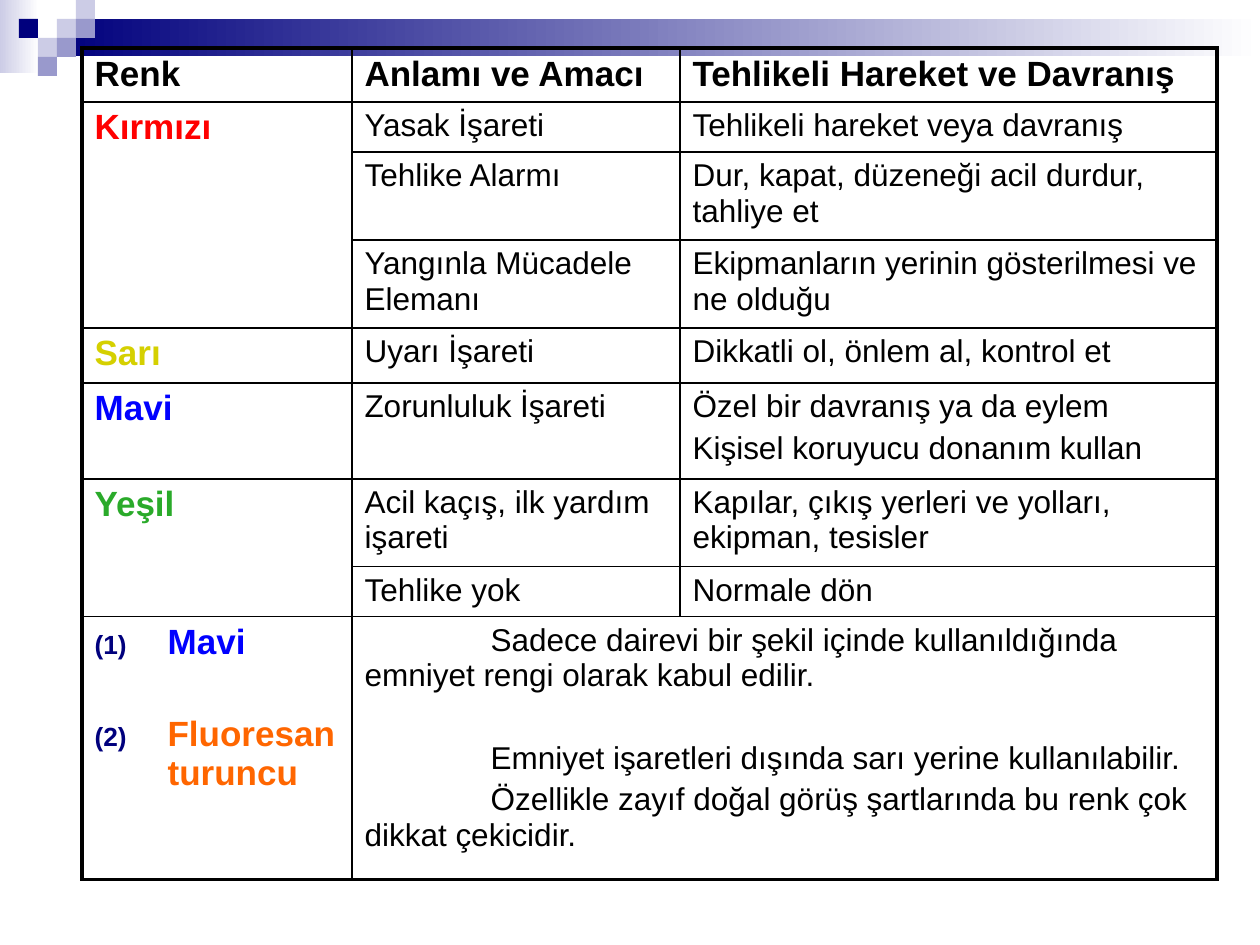
"""Build a slide with a table of safety colours and their meanings."""
from dataclasses import dataclass
from typing import Optional

from lxml.etree import SubElement
from pptx import Presentation
from pptx.dml.color import RGBColor
from pptx.enum.shapes import MSO_SHAPE as Preset
from pptx.oxml.ns import qn
from pptx.util import Emu, Pt

EMU_PER_PX = 914400 / 126
SQUARE = 19
FONT = "Arial"
BLACK, NAVY, LILAC, LAVENDER, WHITE = "000000", "00007D", "9999CC", "CCCCE6", "FFFFFF"
RED, YELLOW, BLUE, GREEN, ORANGE = "FF0000", "D5D000", "0000FF", "2AAA2A", "FF6600"
TABLE_LEFT, TABLE_TOP = 82, 48
COLUMN_WIDTHS = [270, 328, 537]
ROW_HEIGHTS = [54, 50, 88, 88, 55, 96, 88, 50, 263]
THIN, THICK = 1, 2.25


@dataclass(frozen=True)
class Bar:
    """A rectangle with a left-to-right fade."""
    left: int
    top: int
    width: int
    height: int
    color: str


@dataclass(frozen=True)
class Square:
    """A decorative square placed on the corner grid."""
    column: int
    row: int
    color: str


@dataclass(frozen=True)
class Line:
    """One paragraph of a table cell."""
    text: str
    color: str = BLACK
    size: int = 18
    bold: bool = False
    space_before: float = 3.6
    indent: int = 0
    numbered: bool = False


@dataclass(frozen=True)
class Entry:
    """The content and span of a table cell."""
    row: int
    column: int
    lines: list[Line]
    row_span: int = 1
    column_span: int = 1


def heading(text: str, color: str = BLACK, space_before: float = 4,
            numbered: bool = False) -> Line:
    """Return a large bold line."""
    return Line(text, color, 20, True, space_before, numbered=numbered)


BARS = [Bar(0, 0, 39, 73, LAVENDER), Bar(57, 19, 1203, 37, NAVY)]
SQUARES = [
    Square(3, 1, LAVENDER), Square(4, 0, LAVENDER), Square(4, 1, LILAC),
    Square(2, 2, LAVENDER), Square(1, 1, NAVY), Square(3, 2, LILAC),
    Square(2, 3, LILAC),
]
HEADERS = ["Renk", "Anlamı ve Amacı", "Tehlikeli Hareket ve Davranış"]
COLOR_NAMES = [
    Entry(1, 0, [heading("Kırmızı", RED)], row_span=3),
    Entry(4, 0, [heading("Sarı", YELLOW)]),
    Entry(5, 0, [heading("Mavi", BLUE)]),
    Entry(6, 0, [heading("Yeşil", GREEN)], row_span=2),
]
MEANINGS = [
    ("Yasak İşareti", ["Tehlikeli hareket veya davranış"]),
    ("Tehlike Alarmı", ["Dur, kapat, düzeneği acil durdur, tahliye et"]),
    ("Yangınla Mücadele Elemanı", ["Ekipmanların yerinin gösterilmesi ve ne olduğu"]),
    ("Uyarı İşareti", ["Dikkatli ol, önlem al, kontrol et"]),
    ("Zorunluluk İşareti", ["Özel bir davranış ya da eylem",
                            "Kişisel koruyucu donanım kullan"]),
    ("Acil kaçış, ilk yardım işareti", ["Kapılar, çıkış yerleri ve yolları, ekipman, tesisler"]),
    ("Tehlike yok", ["Normale dön"]),
]
NOTES = [
    Entry(8, 0, [heading("Mavi", BLUE, numbered=True),
                 heading("Fluoresan turuncu", ORANGE, 30, True)]),
    Entry(8, 1, [
        Line("Sadece dairevi bir şekil içinde kullanıldığında emniyet rengi "
             "olarak kabul edilir.", indent=126),
        Line("Emniyet işaretleri dışında sarı yerine kullanılabilir.",
             space_before=27, indent=126),
        Line("Özellikle zayıf doğal görüş şartlarında bu renk çok dikkat çekicidir.",
             indent=126),
    ], column_span=2),
]


def px(value: int) -> Emu:
    """Turn pixels into EMU."""
    return Emu(round(value * EMU_PER_PX))


def rgb(color: str) -> RGBColor:
    """Turn a hex string into a colour."""
    return RGBColor.from_string(color)


def add_rectangle(slide, left: int, top: int, width: int, height: int):
    """Add a rectangle without line or shadow."""
    shape = slide.shapes.add_shape(Preset.RECTANGLE, px(left), px(top), px(width), px(height))
    shape.shadow.inherit = False
    shape.line.fill.background()
    return shape


def draw_bar(slide, bar: Bar) -> None:
    """Draw a bar fading to white."""
    fill = add_rectangle(slide, bar.left, bar.top, bar.width, bar.height).fill
    fill.gradient()
    fill.gradient_angle = 0
    for stop, color, position in zip(fill.gradient_stops, (bar.color, WHITE), (0, 1)):
        stop.color.rgb = rgb(color)
        stop.position = position


def draw_square(slide, square: Square) -> None:
    """Draw a square on the corner grid."""
    shape = add_rectangle(slide, square.column * SQUARE, square.row * SQUARE, SQUARE, SQUARE)
    shape.fill.solid()
    shape.fill.fore_color.rgb = rgb(square.color)


def set_number(paragraph) -> None:
    """Give a paragraph a hanging number in parentheses."""
    properties = paragraph._p.get_or_add_pPr()
    properties.set("marL", str(px(73)))
    properties.set("indent", str(px(-73)))
    color = SubElement(properties, qn("a:buClr"))
    SubElement(color, qn("a:srgbClr"), val=NAVY)
    SubElement(properties, qn("a:buSzPct"), val="75000")
    SubElement(properties, qn("a:buFont"), typeface=FONT)
    SubElement(properties, qn("a:buAutoNum"), type="arabicParenBoth")


def write_line(paragraph, line: Line, first: bool) -> None:
    """Write one line into a paragraph."""
    paragraph.space_before = Pt(0 if first else line.space_before)
    if line.numbered:
        set_number(paragraph)
    elif line.indent:
        paragraph._p.get_or_add_pPr().set("indent", str(px(line.indent)))
    run = paragraph.add_run()
    run.text = line.text
    run.font.name = FONT
    run.font.size = Pt(line.size)
    run.font.bold = line.bold
    run.font.color.rgb = rgb(line.color)


def set_borders(cell, outer: dict[str, bool]) -> None:
    """Draw black borders, thick on the outer edges."""
    properties = cell._tc.get_or_add_tcPr()
    for side in ("L", "R", "T", "B"):
        width = Pt(THICK if outer[side] else THIN)
        border = SubElement(properties, qn(f"a:ln{side}"), w=str(width))
        fill = SubElement(border, qn("a:solidFill"))
        SubElement(fill, qn("a:srgbClr"), val=BLACK)


def write_entry(table, entry: Entry) -> None:
    """Merge and fill the cells of an entry."""
    cell = table.cell(entry.row, entry.column)
    last_row = entry.row + entry.row_span - 1
    last_column = entry.column + entry.column_span - 1
    if (last_row, last_column) != (entry.row, entry.column):
        cell.merge(table.cell(last_row, last_column))
    previous: Optional[Line] = None
    for line in entry.lines:
        frame = cell.text_frame
        paragraph = frame.add_paragraph() if previous else frame.paragraphs[0]
        write_line(paragraph, line, previous is None)
        previous = line


def draw_table(slide, entries: list[Entry]) -> None:
    """Draw the table with its borders and entries."""
    rows, columns = len(ROW_HEIGHTS), len(COLUMN_WIDTHS)
    table = slide.shapes.add_table(rows, columns, px(TABLE_LEFT), px(TABLE_TOP),
                                   px(sum(COLUMN_WIDTHS)), px(sum(ROW_HEIGHTS))).table
    table.first_row = table.horz_banding = False
    for column, width in zip(table.columns, COLUMN_WIDTHS):
        column.width = px(width)
    for row, height in zip(table.rows, ROW_HEIGHTS):
        row.height = px(height)
    for entry in entries:
        write_entry(table, entry)
    for row in range(rows):
        for column in range(columns):
            cell = table.cell(row, column)
            last_column = column + (cell.span_width if cell.is_merge_origin else 1) - 1
            set_borders(cell, {"L": column == 0, "R": last_column == columns - 1,
                               "T": row == 0, "B": row == rows - 1})
            cell.fill.background()


def main() -> None:
    """Build and save the presentation."""
    presentation = Presentation()
    presentation.slide_width, presentation.slide_height = px(1260), px(945)
    slide = presentation.slides.add_slide(presentation.slide_layouts[6])
    for bar in BARS:
        draw_bar(slide, bar)
    for square in SQUARES:
        draw_square(slide, square)
    entries = [Entry(0, column, [heading(text)]) for column, text in enumerate(HEADERS)]
    entries += COLOR_NAMES + NOTES
    for row, (meaning, actions) in enumerate(MEANINGS, start=1):
        entries.append(Entry(row, 1, [Line(meaning)]))
        entries.append(Entry(row, 2, [Line(action) for action in actions]))
    draw_table(slide, entries)
    presentation.save("out.pptx")


if __name__ == "__main__":
    main()
